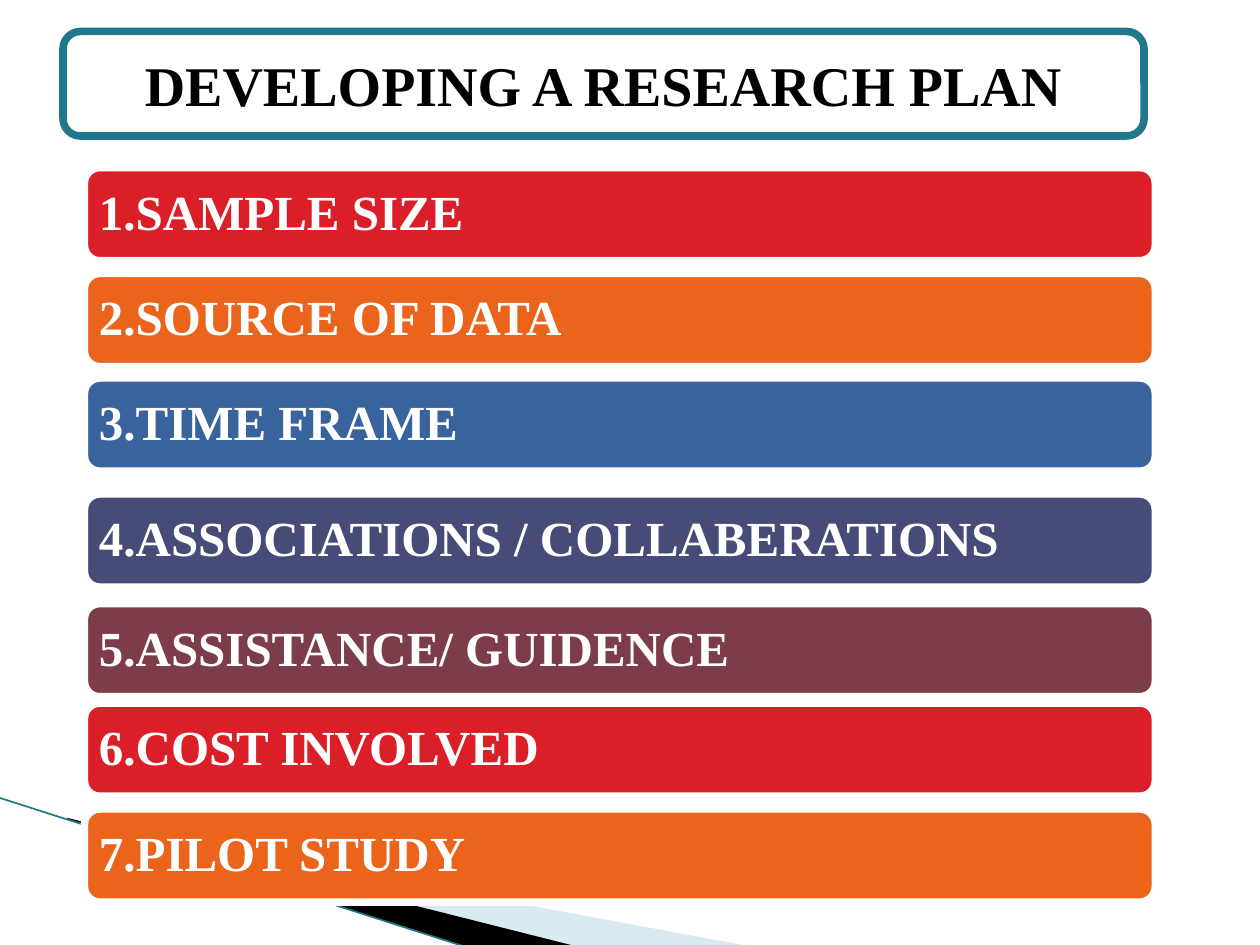
from lxml import etree
from pptx import Presentation
from pptx.dml.color import RGBColor
from pptx.enum.shapes import MSO_CONNECTOR, MSO_SHAPE
from pptx.enum.text import MSO_ANCHOR, PP_ALIGN
from pptx.oxml.ns import qn
from pptx.util import Inches, Pt

ROUNDED = MSO_SHAPE.ROUNDED_RECTANGLE
STRAIGHT = MSO_CONNECTOR.STRAIGHT
MIDDLE = MSO_ANCHOR.MIDDLE
LEFT, CENTER = PP_ALIGN.LEFT, PP_ALIGN.CENTER

WHITE = RGBColor(0xFF, 0xFF, 0xFF)
BLACK = RGBColor(0x00, 0x00, 0x00)
TEAL = RGBColor(0x21, 0x78, 0x8D)
PALE_BLUE = RGBColor(0xA0, 0xCB, 0xDC)
RED = RGBColor(0xDA, 0x1F, 0x28)
ORANGE = RGBColor(0xEB, 0x64, 0x1B)
BLUE = RGBColor(0x39, 0x63, 0x9D)
INDIGO = RGBColor(0x47, 0x4B, 0x78)
MAROON = RGBColor(0x7D, 0x3C, 0x4A)

FONT = "Times New Roman"
BORDER = Pt(4.33)

STEPS = [
    ("1.SAMPLE SIZE", RED, 0),
    ("2.SOURCE OF DATA", ORANGE, 0.84),
    ("3.TIME FRAME", BLUE, 1.67),
    ("4.ASSOCIATIONS / COLLABERATIONS", INDIGO, 2.59),
    ("5.ASSISTANCE/ GUIDENCE", MAROON, 3.46),
    ("6.COST INVOLVED", RED, 4.25),
    ("7.PILOT STUDY", ORANGE, 5.09),
]


def add_wedge(slide, left, top, offsets, color, opacity=100):
    points = [(Inches(left + x), Inches(top + y)) for x, y in offsets]
    builder = slide.shapes.build_freeform(*points[0])
    builder.add_line_segments(points[1:])
    wedge = builder.convert_to_shape()
    wedge.shadow.inherit = False
    wedge.fill.solid()
    wedge.fill.fore_color.rgb = color
    wedge.line.fill.background()
    if opacity < 100:
        tint = wedge.fill._xPr.find(qn("a:solidFill"))[0]
        etree.SubElement(tint, qn("a:alpha"), val=str(opacity * 1000))


def add_corner_sweep(slide, left, top):
    add_wedge(slide, left, top, [(0.56, 0.18), (5.96, 1.18), (4.57, 1.18), (0.56, 0.17)],
              PALE_BLUE, opacity=40)
    add_wedge(slide, left, top, [(0.54, 0.16), (4.58, 1.18), (3.73, 1.19), (0.55, 0.17)], BLACK)
    edge = slide.shapes.add_connector(
        STRAIGHT, Inches(left), Inches(top), Inches(left + 3.72), Inches(top + 1.19))
    edge.line.color.rgb = TEAL
    edge.line.width = Pt(0.95)
    etree.SubElement(edge._element.spPr, qn("a:effectLst"))


def add_panel(slide, left, top, width, height, label, fill, border, ink, size, align):
    panel = slide.shapes.add_shape(
        ROUNDED, Inches(left), Inches(top), Inches(width), Inches(height))
    panel.shadow.inherit = False
    panel.fill.solid()
    panel.fill.fore_color.rgb = fill
    panel.line.color.rgb = border
    panel.line.width = BORDER
    frame = panel.text_frame
    frame.word_wrap = True
    frame.vertical_anchor = MIDDLE
    frame.margin_left = frame.margin_right = Inches(0.08)
    paragraph = frame.paragraphs[0]
    paragraph.alignment = align
    run = paragraph.add_run()
    run.text = label
    run.font.name = FONT
    run.font.size = Pt(size)
    run.font.bold = True
    run.font.color.rgb = ink
    return paragraph


def add_steps(slide, left, top, width, bar_height):
    for label, color, offset in STEPS:
        paragraph = add_panel(slide, left, top + offset, width, bar_height,
                              label, color, WHITE, WHITE, 28, LEFT)
        paragraph.line_spacing = 0.9


def add_title(slide, left, top, width, height):
    add_panel(slide, left, top, width, height,
              "DEVELOPING A RESEARCH PLAN", WHITE, TEAL, BLACK, 32, CENTER)


def main():
    deck = Presentation()
    deck.slide_width, deck.slide_height = Inches(10), Inches(7.5)
    slide = deck.slides.add_slide(deck.slide_layouts[6])
    add_corner_sweep(slide, -0.01, 6.33)
    add_steps(slide, 0.67, 1.33, 8.5, 0.74)
    add_title(slide, 0.5, 0.25, 8.58, 0.83)
    deck.save("out.pptx")


if __name__ == "__main__":
    main()
